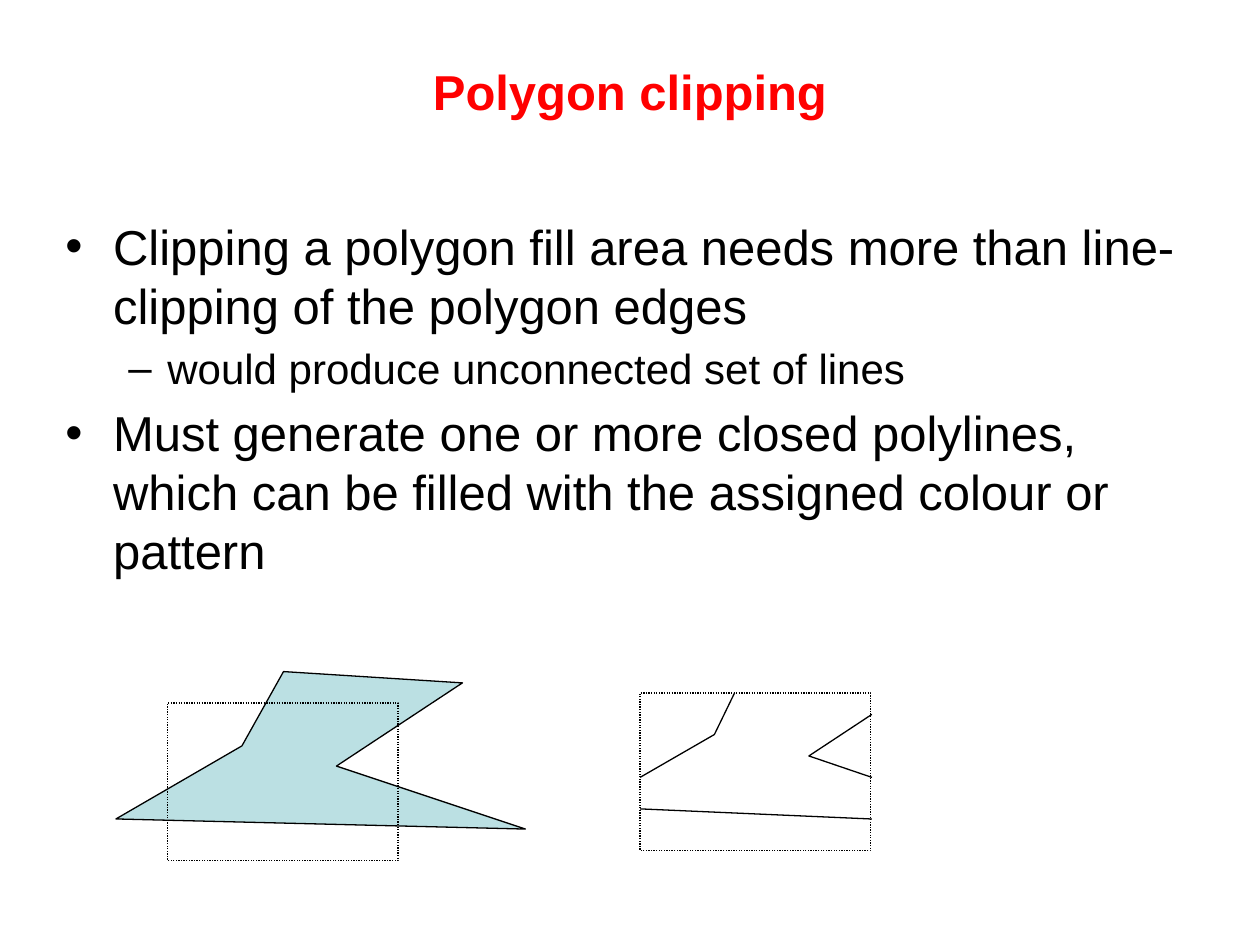
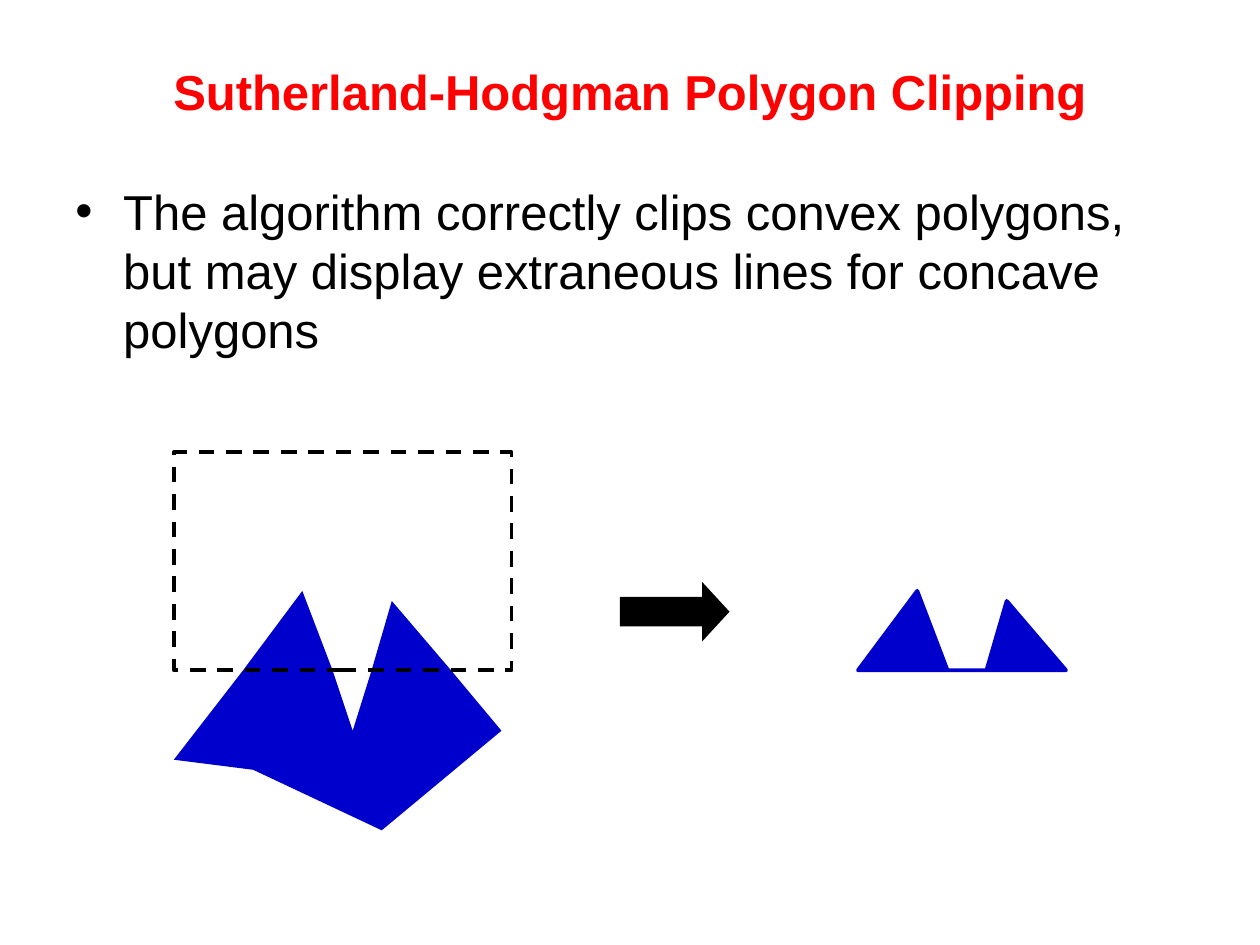
from dataclasses import dataclass
from typing import Optional

from lxml import etree
from pptx import Presentation
from pptx.dml.color import RGBColor
from pptx.enum.dml import MSO_LINE
from pptx.enum.shapes import MSO_CONNECTOR, MSO_SHAPE
from pptx.enum.text import MSO_ANCHOR, PP_ALIGN
from pptx.oxml.ns import qn
from pptx.util import Inches, Pt

RECTANGLE = MSO_SHAPE.RECTANGLE
RIGHT_ARROW = MSO_SHAPE.RIGHT_ARROW
STRAIGHT = MSO_CONNECTOR.STRAIGHT
DOTTED = MSO_LINE.ROUND_DOT
DASHED = MSO_LINE.DASH
MIDDLE = MSO_ANCHOR.MIDDLE
CENTER = PP_ALIGN.CENTER

Point = tuple[float, float]
Box = tuple[float, float, float, float]


@dataclass(frozen=True)
class Theme:
    font: str = "Arial"
    title_size: int = 28
    title_color: str = "FF0000"
    ink: str = "000000"
    pale_fill: str = "BBE0E3"
    blue_fill: str = "0000CC"
    thin: float = 0.75
    thick: float = 2.25
    space_before: int = 20  # per cent of the type size


@dataclass(frozen=True)
class Level:
    size: int
    bullet: str
    margin: float
    hanging: float


@dataclass(frozen=True)
class Bullet:
    text: str
    level: int = 0


@dataclass(frozen=True)
class Style:
    fill: Optional[str] = None
    line: Optional[str] = None
    width: float = 0
    dash: Optional[MSO_LINE] = None


THEME = Theme()
LEVELS = (Level(28, "•", 0.38, 0.38), Level(24, "–", 0.81, 0.31))
TITLE_BOX: Box = (0.5, 0.3, 9, 0.85)

THIN_LINE = Style(line=THEME.ink, width=THEME.thin)
DOTTED_WINDOW = Style(line=THEME.ink, width=THEME.thin, dash=DOTTED)
DASHED_WINDOW = Style(line=THEME.ink, width=THEME.thick, dash=DASHED)
PALE_POLYGON = Style(THEME.pale_fill, THEME.ink, THEME.thin)
BLUE_POLYGON = Style(THEME.blue_fill)
CLIPPED_POLYGON = Style(THEME.blue_fill, THEME.blue_fill, THEME.thick)
SOLID_ARROW = Style(THEME.ink)


def inches(*values: float) -> list[Inches]:
    return [Inches(value) for value in values]


def apply_line(line, style: Style) -> None:
    if style.line is None:
        line.fill.background()
        return
    line.color.rgb = RGBColor.from_string(style.line)
    line.width = Pt(style.width)
    if style.dash is not None:
        line.dash_style = style.dash


def apply_style(shape, style: Style) -> None:
    shape.shadow.inherit = False
    if style.fill is None:
        shape.fill.background()
    else:
        shape.fill.solid()
        shape.fill.fore_color.rgb = RGBColor.from_string(style.fill)
    apply_line(shape.line, style)


def draw_shape(shapes, preset: MSO_SHAPE, box: Box, style: Style):
    shape = shapes.add_shape(preset, *inches(*box))
    apply_style(shape, style)
    return shape


def draw_path(shapes, points: list[Point], style: Style, close: bool = True) -> None:
    start, *rest = [tuple(inches(*point)) for point in points]
    builder = shapes.build_freeform(*start, scale=1.0)
    builder.add_line_segments(rest, close=close)
    apply_style(builder.convert_to_shape(), style)


def draw_line(shapes, start: Point, end: Point, style: Style) -> None:
    connector = shapes.add_connector(STRAIGHT, *inches(*start, *end))
    apply_line(connector.line, style)
    etree.SubElement(connector._element.spPr, qn("a:effectLst"))


def format_runs(paragraph, size: int, color: str, bold: bool = False) -> None:
    for run in paragraph.runs:
        run.font.name = THEME.font
        run.font.size = Pt(size)
        run.font.bold = bold
        run.font.color.rgb = RGBColor.from_string(color)


def add_text_frame(slide, box: Box):
    text_frame = slide.shapes.add_textbox(*inches(*box)).text_frame
    text_frame.word_wrap = True
    return text_frame


def add_title(slide, text: str) -> None:
    text_frame = add_text_frame(slide, TITLE_BOX)
    text_frame.vertical_anchor = MIDDLE
    text_frame.text = text
    paragraph = text_frame.paragraphs[0]
    paragraph.alignment = CENTER
    format_runs(paragraph, THEME.title_size, THEME.title_color, bold=True)


def set_bullet(paragraph, level: Level) -> None:
    """Set the hanging indent, relative spacing and bullet character."""
    properties = paragraph._p.get_or_add_pPr()
    properties.set("marL", str(Inches(level.margin)))
    properties.set("indent", str(-Inches(level.hanging)))
    spacing = etree.SubElement(properties, qn("a:spcBef"))
    percent = etree.SubElement(spacing, qn("a:spcPct"))
    percent.set("val", str(THEME.space_before * 1000))
    etree.SubElement(properties, qn("a:buFont")).set("typeface", THEME.font)
    etree.SubElement(properties, qn("a:buChar")).set("char", level.bullet)


def add_body(slide, box: Box, bullets: list[Bullet]) -> None:
    text_frame = add_text_frame(slide, box)
    text_frame.text = "\n".join(bullet.text for bullet in bullets)
    for paragraph, bullet in zip(text_frame.paragraphs, bullets):
        level = LEVELS[bullet.level]
        paragraph.level = bullet.level
        set_bullet(paragraph, level)
        format_runs(paragraph, level.size, THEME.ink)


def add_slide(presentation, title: str, body_box: Box, bullets: list[Bullet]):
    slide = presentation.slides.add_slide(presentation.slide_layouts[6])
    add_title(slide, title)
    add_body(slide, body_box, bullets)
    return slide


def build_polygon_clipping(presentation) -> None:
    slide = add_slide(presentation, "Polygon clipping", (0.42, 1.67, 9, 4.95), [
        Bullet("Clipping a polygon fill area needs more than line-clipping of the polygon edges"),
        Bullet("would produce unconnected set of lines", 1),
        Bullet("Must generate one or more closed polylines, "
               "which can be filled with the assigned colour or pattern"),
    ])
    polygon = [(1.92, 5.92), (2.25, 5.33), (3.67, 5.42), (2.67, 6.08), (4.17, 6.58), (0.92, 6.5)]
    window_size = (1.83, 1.25)

    unclipped = slide.shapes.add_group_shape().shapes
    draw_path(unclipped, polygon, PALE_POLYGON)
    draw_shape(unclipped, RECTANGLE, (1.33, 5.58, *window_size), DOTTED_WINDOW)

    draw_shape(slide.shapes, RECTANGLE, (5.08, 5.5, *window_size), DOTTED_WINDOW)
    left_edges = [(5.08, 6.17), (5.67, 5.83), (5.83, 5.5)]
    right_edges = [(6.92, 5.67), (6.42, 6), (6.92, 6.17)]
    for edges in (left_edges, right_edges):
        draw_path(slide.shapes, edges, THIN_LINE, close=False)
    draw_line(slide.shapes, (5.08, 6.42), (6.92, 6.5), THIN_LINE)


def build_sutherland_hodgman(presentation) -> None:
    slide = add_slide(presentation, "Sutherland-Hodgman Polygon Clipping", (0.5, 1.39, 9, 5.31), [
        Bullet("The algorithm correctly clips convex polygons, "
               "but may display extraneous lines for concave polygons"),
    ])
    window_bottom = 5.32
    result_offset = 4.88
    polygon = [
        (1.38, 6.03), (1.93, window_bottom), (2.4, 4.69), (2.64, window_bottom),
        (2.8, 5.8), (2.95, window_bottom), (3.11, 4.77), (3.58, window_bottom),
        (3.98, 5.8), (3.03, 6.59), (2.01, 6.11),
    ]
    clipped = [(x + result_offset, y) for x, y in polygon if y <= window_bottom]

    draw_path(slide.shapes, polygon, BLUE_POLYGON)
    draw_shape(slide.shapes, RECTANGLE, (1.38, 3.59, 2.68, 1.73), DASHED_WINDOW)
    arrow = draw_shape(slide.shapes, RIGHT_ARROW, (4.92, 4.62, 0.87, 0.47), SOLID_ARROW)
    arrow.adjustments[1] = 0.46
    draw_path(slide.shapes, clipped, CLIPPED_POLYGON)


def main() -> None:
    presentation = Presentation()
    presentation.slide_width, presentation.slide_height = inches(10, 7.5)
    build_polygon_clipping(presentation)
    build_sutherland_hodgman(presentation)
    presentation.save("out.pptx")


if __name__ == "__main__":
    main()
